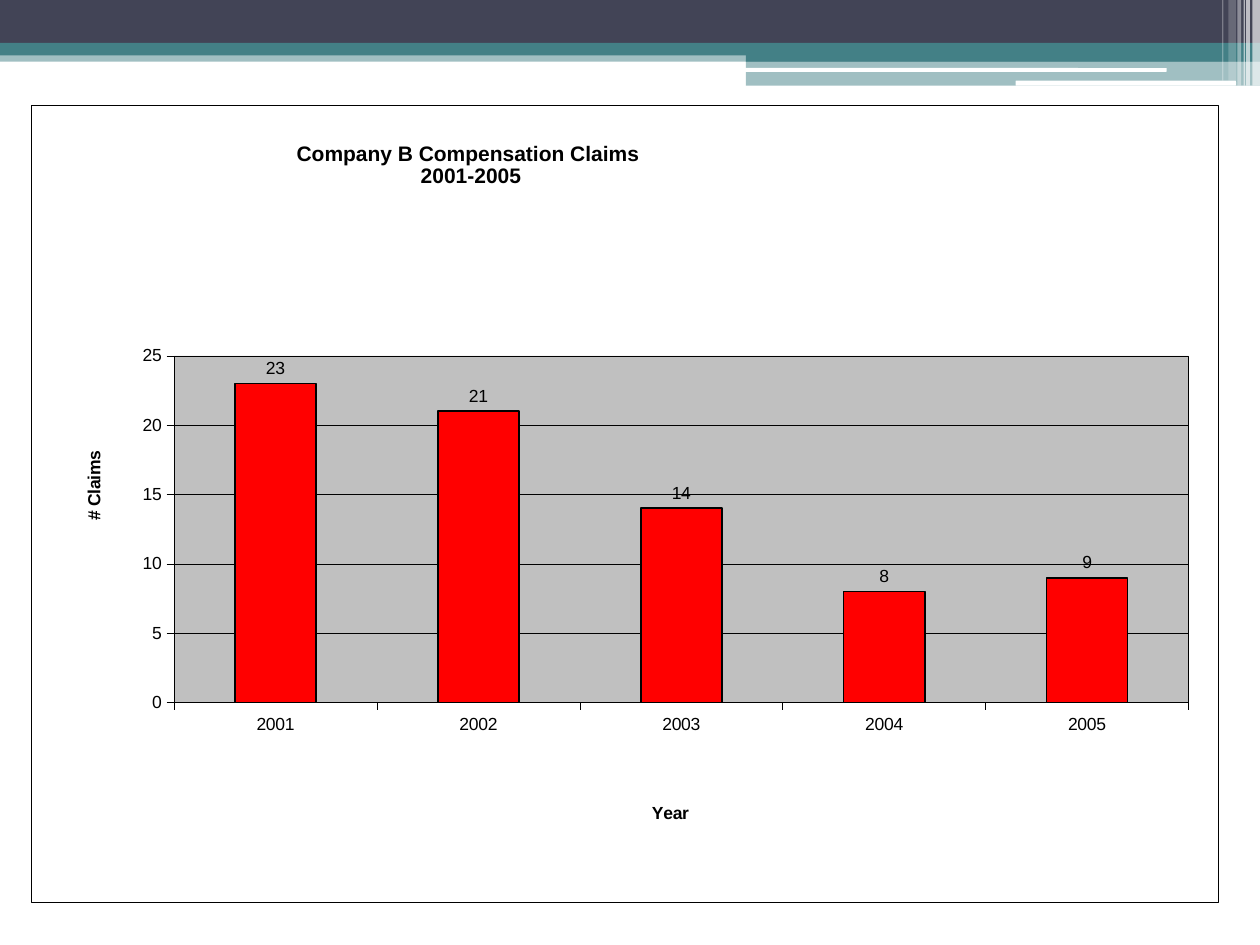
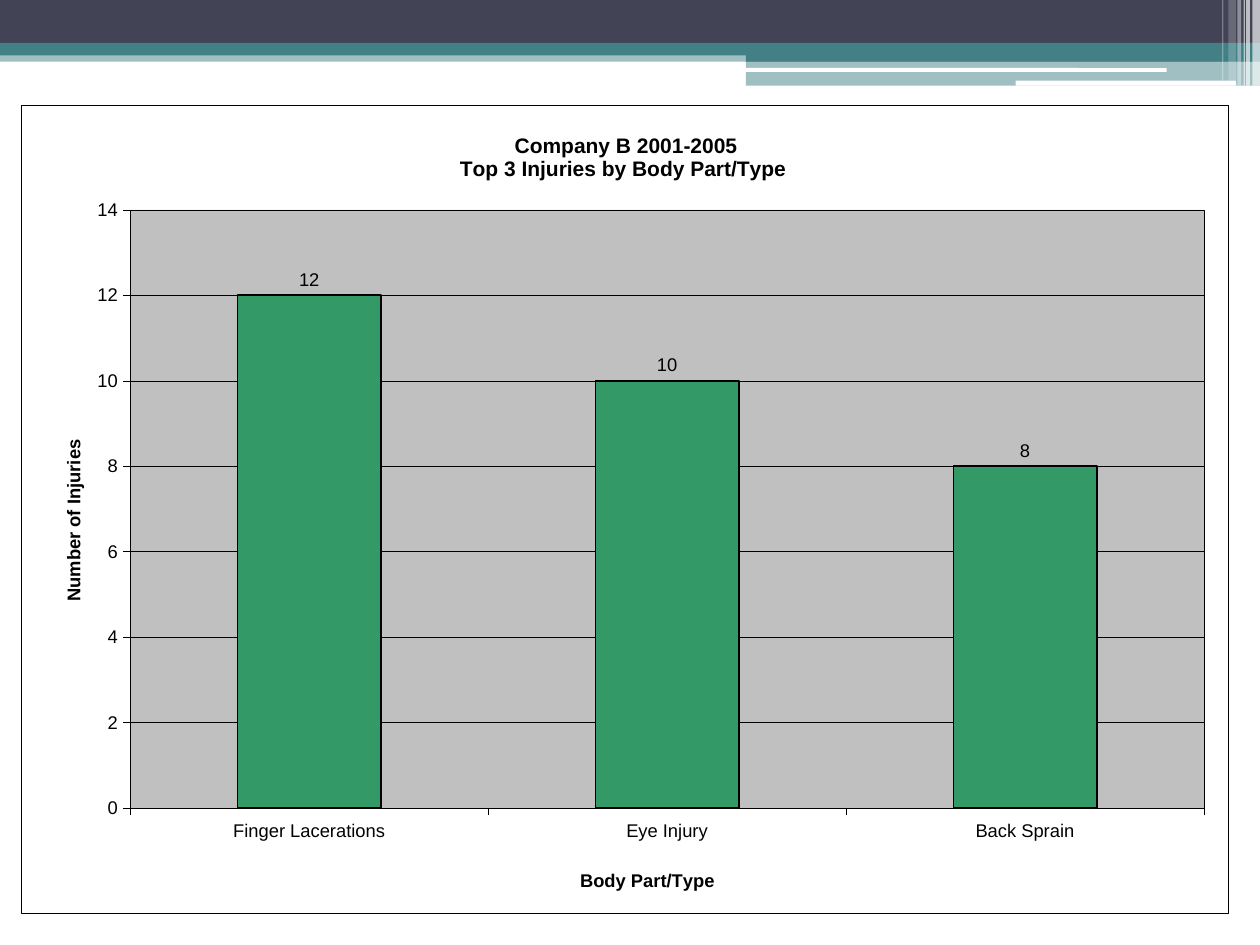
from lxml.etree import SubElement as Sub
from pptx import Presentation
from pptx.chart.data import CategoryChartData
from pptx.dml.color import RGBColor
from pptx.enum.chart import XL_CHART_TYPE as ChartType, XL_LABEL_POSITION as LabelPos
from pptx.enum.chart import XL_TICK_MARK as Tick
from pptx.enum.shapes import MSO_SHAPE as Shape
from pptx.enum.text import PP_ALIGN as Align
from pptx.oxml import parse_xml
from pptx.oxml.ns import nsdecls, qn
from pptx.util import Inches, Pt

rgb = RGBColor.from_string
FONT, BLACK, WHITE = "Arial", "000000", "FFFFFF"
NAVY, TEAL, GREY = "424456", "438086", "C0C0C0"
HAIRLINE = 0.25


def place(parent, index, **fractions):
    """Give a chart part a manual layout, in fractions of the chart."""
    for old in parent.findall(qn("c:layout")):
        parent.remove(old)
    layout = parse_xml(f"<c:layout {nsdecls('c')}><c:manualLayout/></c:layout>")
    if "w" in fractions:
        Sub(layout[0], qn("c:layoutTarget")).set("val", "inner")
    for edge in "xy":
        Sub(layout[0], qn(f"c:{edge}Mode")).set("val", "edge")
    for side, value in fractions.items():
        Sub(layout[0], qn(f"c:{side}")).set("val", str(value))
    parent.insert(index, layout)


def framed(fill):
    """Fill and hairline border for a chart area or plot area."""
    return parse_xml(
        f"<c:spPr {nsdecls('c', 'a')}>"
        f'<a:solidFill><a:srgbClr val="{fill}"/></a:solidFill>'
        f'<a:ln w="{Pt(HAIRLINE)}"><a:solidFill><a:srgbClr val="{BLACK}"/></a:solidFill></a:ln>'
        "</c:spPr>")


prs = Presentation()
prs.slide_width, prs.slide_height = Inches(10), Inches(7.5)
blank = prs.slide_layouts[6]
for placeholder in list(blank.placeholders):
    blank.shapes.element.remove(placeholder.element)

# Header bands: left, top, width, height, colour, opacity %
bands = [
    (0, 0.4, 10, 0.09, TEAL, 50),
    (0, 0, 10, 0.34, NAVY, 100),
    (0, 0.34, 10, 0.1, TEAL, 100),
    (5.92, 0.39, 4.08, 0.1, TEAL, 100),
    (5.92, 0.48, 4.08, 0.2, TEAL, 50),
]
highlights = [(5.91, 0.54, 3.35, 0.03, WHITE, 100), (8.06, 0.64, 1.75, 0.04, WHITE, 100)]
stripes = [(left, 0, width, height, WHITE, opacity) for left, width, height, opacity in [
    (9.94, 0.06, 0.68, 65), (9.89, 0.03, 0.68, 65), (9.87, 0.01, 0.68, 60),
    (9.82, 0.03, 0.68, 40), (9.75, 0.06, 0.64, 20), (9.7, 0.01, 0.64, 30)]]

# Charts: plot and title places are fractions of the chart frame
charts = [
    dict(frame=(0.25, 0.83, 9.42, 6.33), size=10, color="FF0000",
         title="Company B Compensation Claims\n 2001-2005", title_at=(0.22, 0.04),
         cat_title="Year", cat_at=(0.52, 0.87),
         val_title="# Claims", val_at=(0.04, 0.43),
         plot=dict(x=0.12, y=0.315, w=0.855, h=0.435), top=25, step=5,
         claims={"2001": 23, "2002": 21, "2003": 14, "2004": 8, "2005": 9}),
    dict(frame=(0.17, 0.83, 9.58, 6.42), size=10.5, color="339966",
         title="Company B 2001-2005\nTop 3 Injuries by Body Part/Type ", title_at=(0.36, 0.03),
         cat_title="Body Part/Type ", cat_at=(0.46, 0.94),
         val_title="Number of Injuries", val_at=(0.03, 0.41),
         plot=dict(x=0.09, y=0.13, w=0.89, h=0.74), top=14, step=2,
         claims={"Finger Lacerations": 12, "Eye Injury": 10, "Back Sprain": 8}),
]

for number, spec_of in enumerate(charts):
    slide = prs.slides.add_slide(blank)

    # The header is drawn once and moved to the shared layout
    if number == 0:
        for *box, color, opacity in bands + highlights + stripes:
            kind = Shape.ROUNDED_RECTANGLE if (*box, color, opacity) in highlights else Shape.RECTANGLE
            band = slide.shapes.add_shape(kind, *map(Inches, box))
            band.shadow.inherit = False
            band.fill.solid()
            band.fill.fore_color.rgb = rgb(color)
            band.line.fill.background()
            if opacity < 100:
                tint = band.element.find(".//" + qn("a:srgbClr"))
                Sub(tint, qn("a:alpha")).set("val", str(opacity * 1000))
        for band in list(slide.shapes):
            blank.shapes.element.append(band.element)

    # Column chart
    data = CategoryChartData()
    data.categories = list(spec_of["claims"])
    data.add_series("Series 1", list(spec_of["claims"].values()))
    chart = slide.shapes.add_chart(
        ChartType.COLUMN_CLUSTERED, *map(Inches, spec_of["frame"]), data).chart
    chart.has_legend = False
    chart.font.name, chart.font.size = FONT, Pt(spec_of["size"])
    chart.font.color.rgb = rgb(BLACK)
    chart.element.find(qn("c:chart")).addnext(framed(WHITE))
    plot_area = chart.element.find(".//" + qn("c:plotArea"))
    place(plot_area, 0, **spec_of["plot"])
    plot_area.append(framed(GREY))

    # Columns and value labels
    plot = chart.plots[0]
    plot.gap_width, plot.vary_by_categories = 150, False
    columns = plot.series[0]
    columns.format.fill.solid()
    columns.format.fill.fore_color.rgb = rgb(spec_of["color"])
    columns.format.line.color.rgb = rgb(BLACK)
    columns.format.line.width = Pt(1)
    plot.has_data_labels = True
    labels = plot.data_labels
    labels.show_value, labels.position = True, LabelPos.OUTSIDE_END
    labels.font.name, labels.font.size = FONT, Pt(spec_of["size"])
    labels.font.color.rgb = rgb(BLACK)

    # Axes and gridlines
    years, counts = chart.category_axis, chart.value_axis
    counts.minimum_scale, counts.maximum_scale = 0, spec_of["top"]
    counts.major_unit = spec_of["step"]
    counts.has_major_gridlines, years.has_major_gridlines = True, False
    for axis in (years, counts):
        axis.major_tick_mark, axis.minor_tick_mark = Tick.OUTSIDE, Tick.NONE
        axis.tick_labels.font.name = FONT
        axis.tick_labels.font.size = Pt(spec_of["size"])
        axis.tick_labels.font.color.rgb = rgb(BLACK)
    for ruled in (years, counts, counts.major_gridlines):
        ruled.format.line.color.rgb = rgb(BLACK)
        ruled.format.line.width = Pt(HAIRLINE)

    # Chart and axis titles
    for heading, part, size in [(chart.chart_title, "title", 12),
                                (years.axis_title, "cat", spec_of["size"]),
                                (counts.axis_title, "val", spec_of["size"])]:
        words = heading.text_frame
        words.text = spec_of["title" if part == "title" else f"{part}_title"]
        for line in words.paragraphs:
            line.alignment = Align.CENTER
            for run in line.runs:
                for name, value in dict(name=FONT, size=Pt(size), bold=True).items():
                    setattr(run.font, name, value)
                run.font.color.rgb = rgb(BLACK)
        x, y = spec_of[f"{part}_at"]
        place(heading.element, 1, x=x, y=y)
    turned = counts.axis_title.element.find(".//" + qn("a:bodyPr"))
    turned.set("rot", "-5400000")
    turned.set("vert", "horz")

prs.save("out.pptx")
